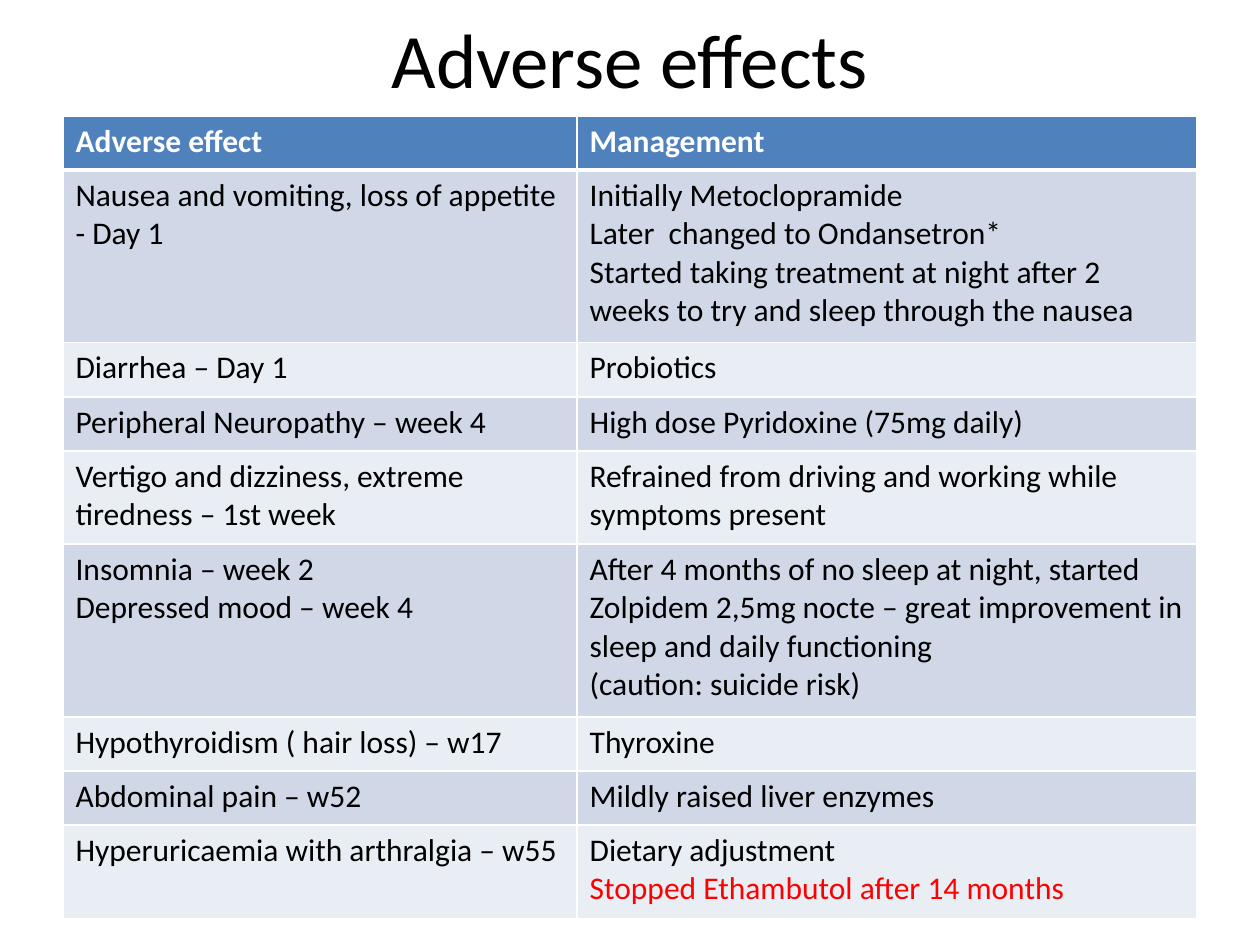
import pptx
import pptx.dml.color
import pptx.enum.text
import pptx.oxml.ns
import pptx.util
from lxml import etree
from pptx.util import Inches, Pt

TITLE = "Adverse effects"
HEADER = ("Adverse effect", "Management")
# "\n" starts a paragraph, "\v" breaks a line within one
EFFECTS = [
    ("Nausea and vomiting, loss of appetite\v- Day 1",
     "Initially Metoclopramide\nLater  changed to Ondansetron*\n"
     "Started taking treatment at night after 2 weeks to try and sleep through the nausea"),
    ("Diarrhea – Day 1", "Probiotics"),
    ("Peripheral Neuropathy – week 4", "High dose Pyridoxine (75mg daily)"),
    ("Vertigo and dizziness, extreme tiredness – 1st week",
     "Refrained from driving and working while symptoms present"),
    ("Insomnia – week 2\vDepressed mood – week 4",
     "After 4 months of no sleep at night, started Zolpidem 2,5mg nocte – "
     "great improvement in sleep and daily functioning\n(caution: suicide risk)"),
    ("Hypothyroidism ( hair loss) – w17", "Thyroxine"),
    ("Abdominal pain – w52", "Mildly raised liver enzymes"),
    ("Hyperuricaemia with arthralgia – w55",
     "Dietary adjustment\nStopped Ethambutol after 14 months"),
]
WARNING = "Stopped Ethambutol after 14 months"
COLUMN_WIDTHS = (4.08, 4.92)
HEIGHT_BY_LINES = {1: 0.43, 2: 0.74, 4: 1.37}
ROW_LINES = (1, 4, 1, 1, 2, 4, 1, 1, 2)
LEFT, TITLE_HEIGHT = 0.5, 0.92
FONT = "Calibri"
BLACK, WHITE, RED = "000000", "FFFFFF", "FF0000"
HEADER_FILL, BAND_FILLS = "4F81BD", ("D0D8E8", "E9EDF4")


def color(value):
    return pptx.dml.color.RGBColor.from_string(value)


def set_font(paragraph, size, value, bold=False):
    paragraph.font.name = FONT
    paragraph.font.size = Pt(size)
    paragraph.font.bold = bold
    paragraph.font.color.rgb = color(value)


def add_borders(cell, widths):
    """Draw white borders; widths maps L, R, T and B to points."""
    properties = cell._tc.get_or_add_tcPr()
    qn = pptx.oxml.ns.qn
    for side in "LRTB":
        line = etree.SubElement(properties, qn(f"a:ln{side}"), w=str(Pt(widths[side])))
        fill = etree.SubElement(line, qn("a:solidFill"))
        etree.SubElement(fill, qn("a:srgbClr"), val=WHITE)


def add_title(slide):
    title = slide.shapes.title
    title.left, title.top = Inches(LEFT), Inches(0)
    title.width, title.height = Inches(sum(COLUMN_WIDTHS)), Inches(TITLE_HEIGHT)
    title.text_frame.text = TITLE
    title.text_frame.vertical_anchor = pptx.enum.text.MSO_ANCHOR.MIDDLE
    paragraph = title.text_frame.paragraphs[0]
    paragraph.alignment = pptx.enum.text.PP_ALIGN.CENTER
    set_font(paragraph, 44, BLACK)


def add_effects_table(slide):
    rows = [HEADER] + EFFECTS
    heights = [HEIGHT_BY_LINES[lines] for lines in ROW_LINES]
    table = slide.shapes.add_table(
        len(rows), len(HEADER), Inches(LEFT), Inches(TITLE_HEIGHT),
        Inches(sum(COLUMN_WIDTHS)), Inches(sum(heights))).table
    for column, width in zip(table.columns, COLUMN_WIDTHS):
        column.width = Inches(width)
    for index, (texts, height) in enumerate(zip(rows, heights)):
        table.rows[index].height = Inches(height)
        is_header = index == 0
        fill = HEADER_FILL if is_header else BAND_FILLS[(index - 1) % 2]
        borders = {"L": 1, "R": 1, "T": 3 if index == 1 else 1, "B": 3 if is_header else 1}
        for cell, text in zip(table.rows[index].cells, texts):
            cell.text_frame.text = text
            add_borders(cell, borders)
            cell.fill.solid()
            cell.fill.fore_color.rgb = color(fill)
            for paragraph in cell.text_frame.paragraphs:
                text_color = WHITE if is_header else RED if paragraph.text == WARNING else BLACK
                set_font(paragraph, 18, text_color, bold=is_header)


def main():
    presentation = pptx.Presentation()
    presentation.slide_width, presentation.slide_height = Inches(10), Inches(7.5)
    slide = presentation.slides.add_slide(presentation.slide_layouts[5])
    add_title(slide)
    add_effects_table(slide)
    presentation.save("out.pptx")


if __name__ == "__main__":
    main()
